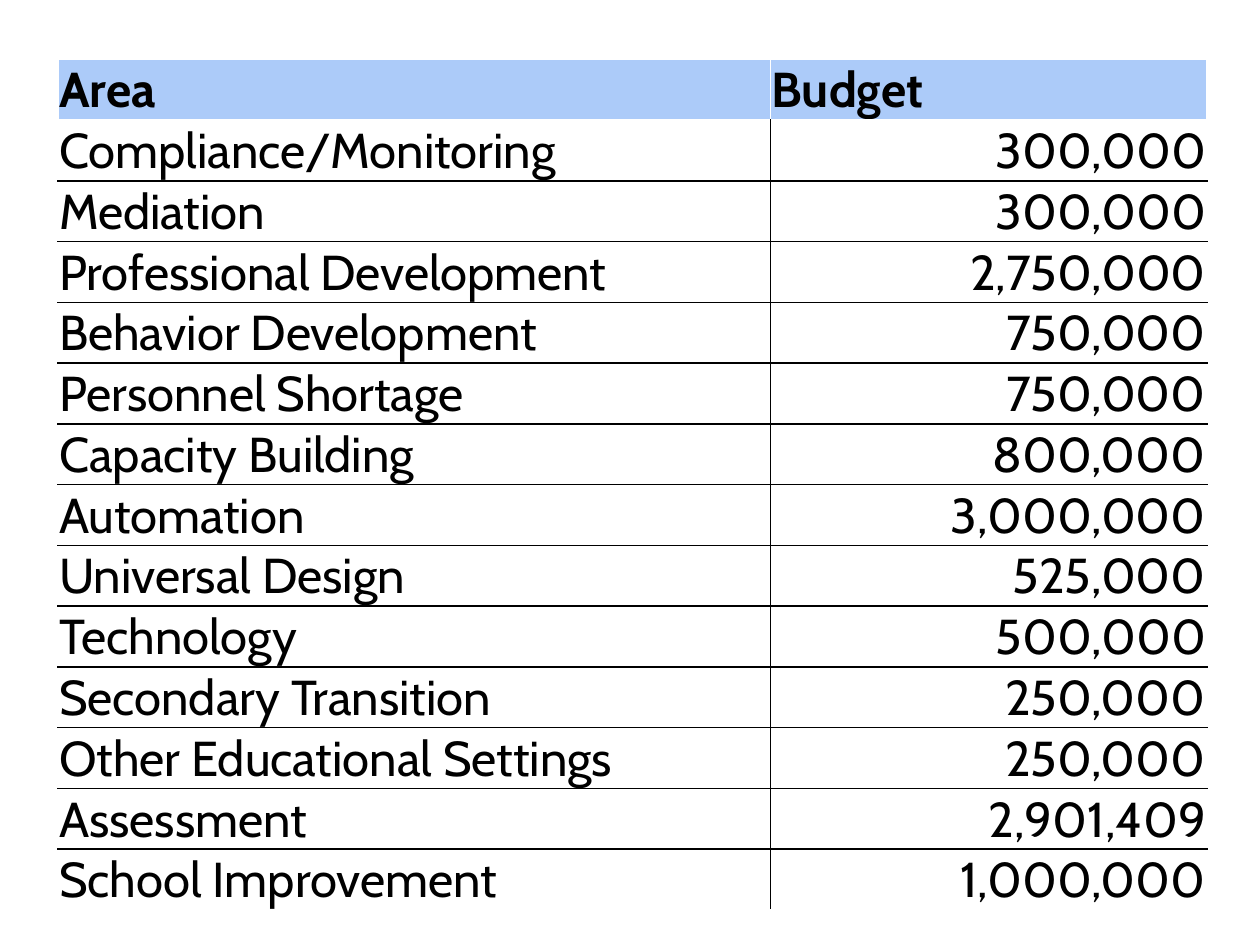
from lxml.etree import SubElement
from pptx import Presentation
from pptx.dml.color import RGBColor
from pptx.enum.text import MSO_ANCHOR, PP_ALIGN
from pptx.oxml.ns import qn
from pptx.util import Inches, Pt

BLACK = RGBColor(0x00, 0x00, 0x00)
WHITE = RGBColor(0xFF, 0xFF, 0xFF)
HEADER_BLUE = RGBColor(0xAC, 0xCB, 0xF9)
FONT = "Cabin"
AREA_SHARE = 0.62

HEADER = ("Area", "Budget")
BUDGETS = [
    ("Compliance/Monitoring", "300,000"),
    ("Mediation", "300,000"),
    ("Professional Development", "2,750,000"),
    ("Behavior Development", "750,000"),
    ("Personnel Shortage", "750,000"),
    ("Capacity Building", "800,000"),
    ("Automation", "3,000,000"),
    ("Universal Design", "525,000"),
    ("Technology", "500,000"),
    ("Secondary Transition", "250,000"),
    ("Other Educational Settings", "250,000"),
    ("Assessment", "2,901,409"),
    ("School Improvement", "1,000,000"),
]


def set_borders(cell, left, right, top, bottom):
    """Draw 1 pt cell borders; they must precede the fill in tcPr."""
    tc_pr = cell._tc.get_or_add_tcPr()
    sides = zip(("lnL", "lnR", "lnT", "lnB"), (left, right, top, bottom))
    for i, (tag, color) in enumerate(sides):
        ln = SubElement(tc_pr, qn(f"a:{tag}"), w=str(Pt(1)))
        fill = SubElement(ln, qn("a:solidFill"))
        SubElement(fill, qn("a:srgbClr"), val=str(color))
        tc_pr.insert(i, ln)


def format_cell(cell, text, is_header, is_amount):
    cell.margin_left = cell.margin_right = cell.margin_top = Inches(0.01)
    cell.margin_bottom = 0
    cell.vertical_anchor = MSO_ANCHOR.BOTTOM
    cell.text = text
    p = cell.text_frame.paragraphs[0]
    p.alignment = PP_ALIGN.RIGHT if is_amount and not is_header else PP_ALIGN.LEFT
    p.font.name, p.font.size = FONT, Pt(28)
    p.font.bold = is_header
    p.font.color.rgb = BLACK
    if is_header:
        cell.fill.solid()
        cell.fill.fore_color.rgb = HEADER_BLUE
    else:
        cell.fill.background()


def add_budget_table(s, left, top, width, height):
    rows = [HEADER] + BUDGETS
    last = len(rows) - 1
    table = s.shapes.add_table(len(rows), 2, left, top, width, height).table
    table.columns[0].width = int(width * AREA_SHARE)
    table.columns[1].width = width - table.columns[0].width
    for r, values in enumerate(rows):
        table.rows[r].height = height // len(rows)
        divider = BLACK if r > 0 else WHITE
        above = BLACK if r > 1 else WHITE
        below = BLACK if 0 < r < last else WHITE
        for c, text in enumerate(values):
            cell = table.cell(r, c)
            format_cell(cell, text, r == 0, c == 1)
            left_line, right_line = (divider, WHITE) if c else (WHITE, divider)
            set_borders(cell, left_line, right_line, above, below)


def main():
    prs = Presentation()
    prs.slide_width, prs.slide_height = Inches(10), Inches(7.5)
    s = prs.slides.add_slide(prs.slide_layouts[6])
    add_budget_table(s, Inches(0.46), Inches(0.47), Inches(9.12), Inches(6.68))
    prs.save("out.pptx")


if __name__ == "__main__":
    main()
